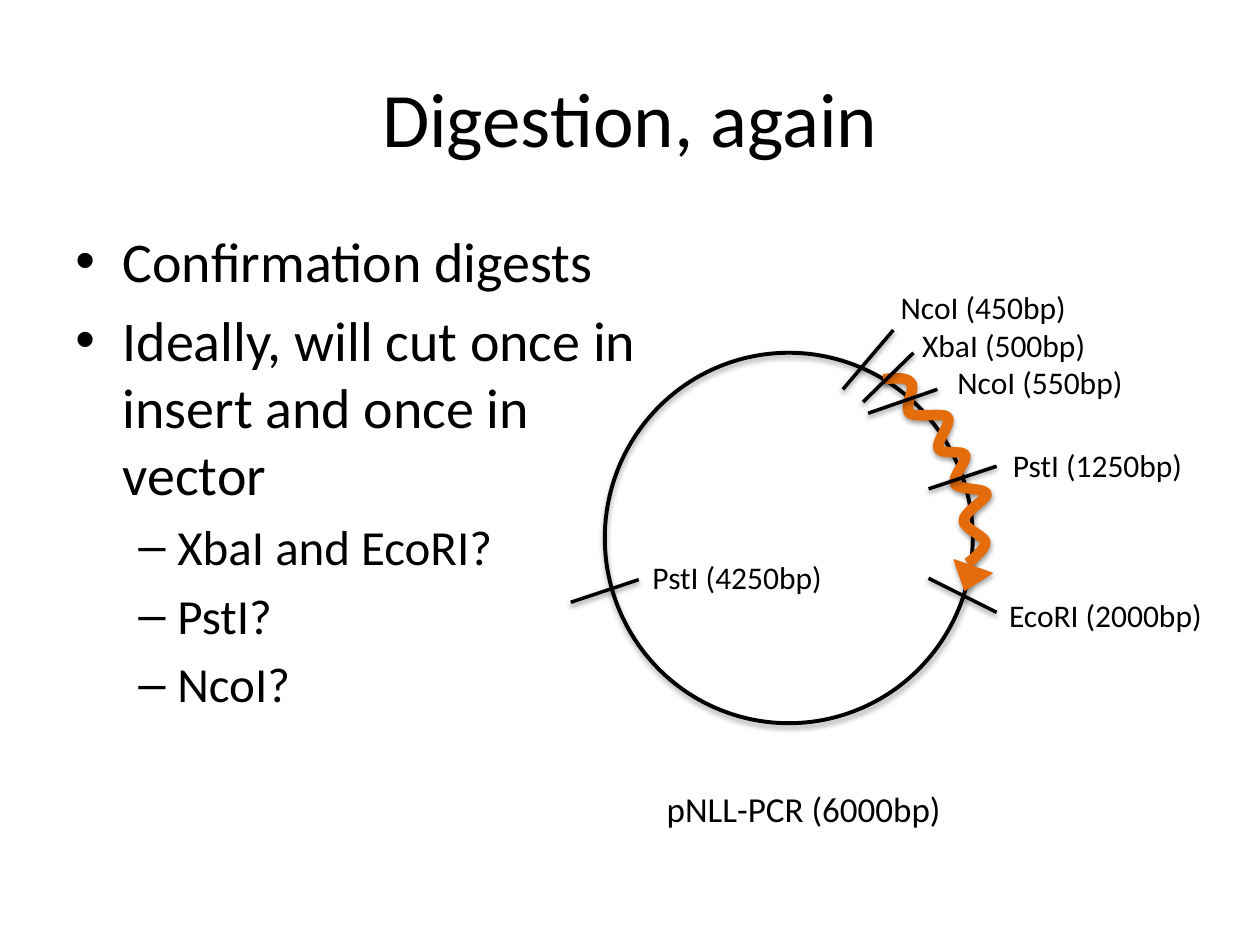
import pptx
import pptx.dml.color
import pptx.enum.shapes
import pptx.enum.text
import pptx.oxml.ns
import pptx.util
from lxml import etree

COLUMNS, ROWS = 100, 75
SLIDE_WIDTH, SLIDE_HEIGHT = pptx.util.Inches(10), pptx.util.Inches(7.5)
FONT = "Calibri"
BLACK, ORANGE = "000000", "E46C0A"

# level: (font size, bullet, left margin, hanging indent), lengths in columns
BULLET_STYLES = {0: (32, "•", 3.75, 3.75), 1: (28, "–", 8.1, 3.1)}
BULLETS = [
    (0, "Confirmation digests"),
    (0, "Ideally, will cut once in insert and once in vector"),
    (1, "XbaI and EcoRI?"),
    (1, "PstI?"),
    (1, "NcoI?"),
]

# name, label position, start and end of the tick across the plasmid
CUT_SITES = [
    ("NcoI (450bp)", (70.5, 22.4), (66.9, 30.9), (70.9, 26.2)),
    ("XbaI (500bp)", (72.2, 25.4), (68.5, 31.9), (72.5, 28)),
    ("NcoI (550bp)", (75, 28.3), (68.9, 32.8), (74.4, 30.9)),
    ("PstI (1250bp)", (79.4, 34.9), (73.7, 38.8), (79.1, 37)),
    ("EcoRI (2000bp)", (79.1, 46.8), (73.7, 45.9), (79.1, 48.6)),
    ("PstI (4250bp)", (50.8, 43.8), (45.3, 47.8), (50.7, 46)),
]

INSERT_START = (70.1, 30.1)
# two control points and the end point of each bend
INSERT_BENDS = [
    ((71, 30), (72, 29.9), (72.3, 30.4)),
    ((72.7, 30.8), (71.7, 32.3), (72.2, 32.8)),
    ((72.7, 33.2), (74.8, 32.7), (75.2, 33.1)),
    ((75.6, 33.6), (74.2, 35.1), (74.5, 35.6)),
    ((74.7, 36.1), (76.3, 35.7), (76.6, 36.1)),
    ((76.8, 36.6), (75.5, 37.9), (75.8, 38.4)),
    ((76.1, 38.9), (78.2, 38.7), (78.3, 39.2)),
    ((78.4, 39.6), (76.5, 40.6), (76.5, 41.3)),
    ((76.4, 41.9), (78.1, 42.5), (78.2, 43)),
    ((78.3, 43.6), (76.8, 44.7), (76.8, 44.7)),
]


def column(number):
    return round(SLIDE_WIDTH * number / COLUMNS)


def row(number):
    return round(SLIDE_HEIGHT * number / ROWS)


def box(left, top, width, height):
    return column(left), row(top), column(width), row(height)


def color(value):
    return pptx.dml.color.RGBColor.from_string(value)


def add_element(parent, tag, **attributes):
    element = etree.SubElement(parent, pptx.oxml.ns.qn(tag))
    for name, value in attributes.items():
        element.set(name, str(value))
    return element


def style_line(shape, line_color, width):
    shape.line.color.rgb = color(line_color)
    shape.line.width = pptx.util.Pt(width)


def add_shadow(shape, distance, opacity):
    """Cast a soft shadow straight down; call it after the line is set."""
    effects = add_element(shape._element.spPr, "a:effectLst")
    shadow = add_element(effects, "a:outerShdw", blurRad=pptx.util.Pt(3.1),
                         dist=pptx.util.Pt(distance), dir=90 * 60000, rotWithShape=0)
    tone = add_element(shadow, "a:srgbClr", val=BLACK)
    add_element(tone, "a:alpha", val=opacity * 1000)


def style_text(paragraph, text, size, alignment=pptx.enum.text.PP_ALIGN.LEFT):
    paragraph.text = text
    paragraph.alignment = alignment
    paragraph.font.name = FONT
    paragraph.font.size = pptx.util.Pt(size)
    paragraph.font.color.rgb = color(BLACK)


def add_title(slide, text):
    title = slide.shapes.title
    title.left, title.top, title.width, title.height = box(5, 3, 90, 12.5)
    title.text_frame.vertical_anchor = pptx.enum.text.MSO_ANCHOR.MIDDLE
    style_text(title.text_frame.paragraphs[0], text, 44, pptx.enum.text.PP_ALIGN.CENTER)


def add_bullets(slide, items):
    frame = slide.shapes.add_textbox(*box(5, 17.5, 46.7, 49.5)).text_frame
    frame.word_wrap = True
    for index, (level, text) in enumerate(items):
        paragraph = frame.add_paragraph() if index else frame.paragraphs[0]
        size, bullet, margin, indent = BULLET_STYLES[level]
        style_text(paragraph, text, size)
        paragraph.level = level
        paragraph.space_before = pptx.util.Pt(size * 0.2)
        properties = paragraph._p.get_or_add_pPr()
        properties.set("marL", str(column(margin)))
        properties.set("indent", str(-column(indent)))
        bullet_font = add_element(properties, "a:buFont", typeface="Arial")
        bullet_mark = add_element(properties, "a:buChar", char=bullet)
        bullet_font.addnext(bullet_mark)
        # the run defaults must follow the bullet
        properties.append(properties.find(pptx.oxml.ns.qn("a:defRPr")))


def add_label(slide, text, area, size, alignment=pptx.enum.text.PP_ALIGN.LEFT):
    frame = slide.shapes.add_textbox(*box(*area)).text_frame
    frame.word_wrap = True
    style_text(frame.paragraphs[0], text, size, alignment)


def add_plasmid(slide):
    circle = slide.shapes.add_shape(pptx.enum.shapes.MSO_SHAPE.OVAL, *box(48, 28, 29.2, 29.4))
    circle.fill.background()
    style_line(circle, BLACK, 2.25)
    add_shadow(circle, 1.8, 35)


def curve_points(start, bends, steps=12):
    """Points along a chain of cubic Bézier curves."""
    for first, second, end in bends:
        for step in range(1, steps + 1):
            t = step / steps
            weights = ((1 - t) ** 3, 3 * t * (1 - t) ** 2, 3 * t * t * (1 - t), t ** 3)
            corners = (start, first, second, end)
            x, y = (sum(w * corner[axis] for w, corner in zip(weights, corners))
                    for axis in (0, 1))
            yield column(x), row(y)
        start = end


def add_insert(slide):
    """Wavy gene insert that ends in an arrowhead."""
    builder = slide.shapes.build_freeform(column(INSERT_START[0]), row(INSERT_START[1]))
    builder.add_line_segments(list(curve_points(INSERT_START, INSERT_BENDS)), close=False)
    wave = builder.convert_to_shape()
    wave.fill.background()
    style_line(wave, ORANGE, 6)
    add_shadow(wave, 1.6, 38)

    head = slide.shapes.add_shape(pptx.enum.shapes.MSO_SHAPE.ISOSCELES_TRIANGLE,
                                  *box(75.3, 44.9, 3.2, 2))
    head.rotation = 199.3
    head.fill.solid()
    head.fill.fore_color.rgb = color(ORANGE)
    style_line(head, ORANGE, 0.75)
    add_shadow(head, 1.8, 35)


def add_cut_site(slide, name, position, start, end):
    tick = slide.shapes.add_connector(pptx.enum.shapes.MSO_CONNECTOR.STRAIGHT,
                                      column(start[0]), row(start[1]),
                                      column(end[0]), row(end[1]))
    style_line(tick, BLACK, 2)
    add_shadow(tick, 1.6, 38)
    add_label(slide, name, (*position, 19.2, 4), 18)


def main():
    presentation = pptx.Presentation()
    presentation.slide_width, presentation.slide_height = SLIDE_WIDTH, SLIDE_HEIGHT
    slide = presentation.slides.add_slide(presentation.slide_layouts.get_by_name("Title Only"))
    add_title(slide, "Digestion, again")
    add_bullets(slide, BULLETS)
    add_plasmid(slide)
    add_label(slide, "pNLL-PCR (6000bp)", (49.1, 62, 29.4, 4.4), 20,
              pptx.enum.text.PP_ALIGN.CENTER)
    add_insert(slide)
    for site in CUT_SITES:
        add_cut_site(slide, *site)
    presentation.save("out.pptx")


if __name__ == "__main__":
    main()
